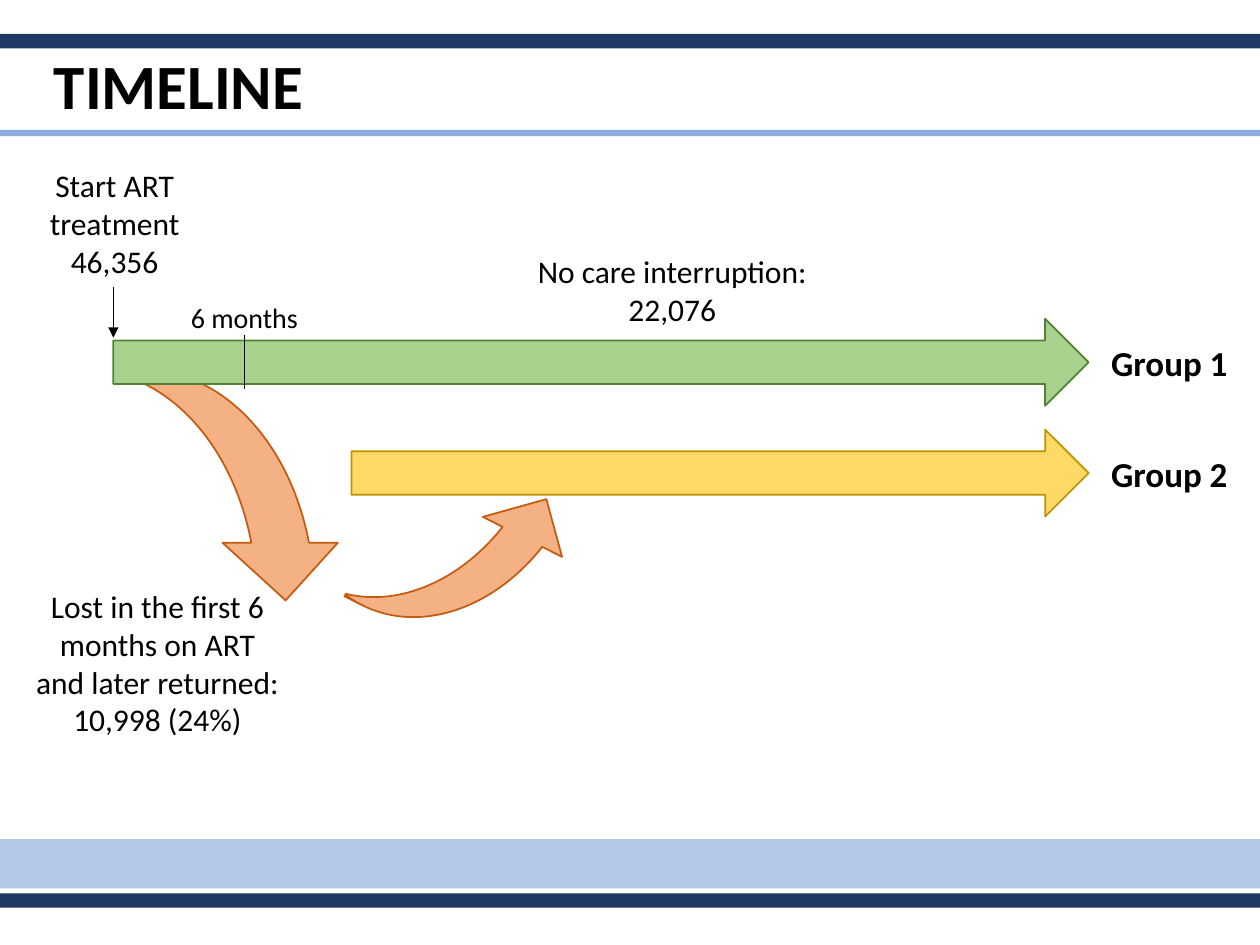
from dataclasses import dataclass
from lxml.etree import SubElement
from pptx import Presentation
from pptx.dml.color import RGBColor
from pptx.enum.shapes import MSO_CONNECTOR, MSO_SHAPE
from pptx.enum.text import MSO_ANCHOR, MSO_AUTO_SIZE, PP_ALIGN
from pptx.oxml.ns import qn
from pptx.util import Inches, Pt

COLUMNS, ROWS = 100, 75


@dataclass(frozen=True)
class Theme:
    font: str = "Calibri"
    ink: str = "000000"
    paper: str = "FFFFFF"
    navy: str = "203864"
    blue: str = "8FAADC"
    pale_blue: str = "B4C7E7"
    green: tuple = ("A9D18E", "548235")
    yellow: tuple = ("FFD966", "BF9000")
    orange: tuple = ("F4B183", "C55A11")
    title: int = 36
    group: int = 20
    body: int = 18
    small: int = 16


THEME = Theme()


@dataclass(frozen=True)
class Box:
    left: float
    top: float
    width: float
    height: float

    def inner(self, column, row, width, height):
        return Box(self.left + column, self.top + row, width, height)

    def lengths(self, deck):
        across, down = deck.slide_width / COLUMNS, deck.slide_height / ROWS
        return (round(self.left * across), round(self.top * down),
                round(self.width * across), round(self.height * down))


class Canvas:
    def __init__(self, deck):
        self.deck = deck
        self.shapes = deck.slides.add_slide(deck.slide_layouts[6]).shapes

    def shape(self, kind, box, fill, line=None, rotation=0, flip=False):
        form = self.shapes.add_shape(kind, *box.lengths(self.deck))
        form.shadow.inherit = False
        form.fill.solid()
        form.fill.fore_color.rgb = RGBColor.from_string(fill)
        if line:
            form.line.color.rgb = RGBColor.from_string(line)
            form.line.width = Pt(1)
        else:
            form.line.fill.background()
        form.rotation = rotation
        if flip:
            form._element.spPr.find(qn("a:xfrm")).set("flipV", "1")

    def text(self, box, paragraphs, size, bold=False, align=PP_ALIGN.CENTER,
             middle=False, wrap=True, spacing=None):
        holder = self.shapes.add_textbox(*box.lengths(self.deck))
        frame = holder.text_frame
        frame.word_wrap = wrap
        frame.auto_size = MSO_AUTO_SIZE.NONE if middle else MSO_AUTO_SIZE.SHAPE_TO_FIT_TEXT
        frame.vertical_anchor = MSO_ANCHOR.MIDDLE if middle else MSO_ANCHOR.TOP
        for index, words in enumerate(paragraphs):
            paragraph = frame.add_paragraph() if index else frame.paragraphs[0]
            paragraph.alignment = align
            paragraph.line_spacing = spacing
            run = paragraph.add_run()
            run.text = words
            run.font.name = THEME.font
            run.font.size = Pt(size)
            run.font.bold = bold
            run.font.color.rgb = RGBColor.from_string(THEME.ink)

    def marker(self, box, arrow=False):
        left, top, _, height = box.lengths(self.deck)
        line = self.shapes.add_connector(MSO_CONNECTOR.STRAIGHT, left, top, left, top + height)
        line.line.color.rgb = RGBColor.from_string(THEME.ink)
        line.line.width = Pt(0.5)
        if arrow:
            SubElement(line.line._get_or_add_ln(), qn("a:tailEnd"), type="triangle")
        SubElement(line._element.spPr, qn("a:effectLst"))


def header(canvas, box):
    canvas.shape(MSO_SHAPE.RECTANGLE, box.inner(0, 0, box.width, 1.15), THEME.navy)
    canvas.shape(MSO_SHAPE.RECTANGLE, box.inner(0, box.height - 0.5, box.width, 0.5), THEME.blue)
    canvas.text(box.inner(3.3, 1.4, 94.2, 5.9), ["TIMELINE"], THEME.title, bold=True,
                align=PP_ALIGN.LEFT, middle=True, spacing=0.9)


def footer(canvas, box):
    canvas.shape(MSO_SHAPE.RECTANGLE, box.inner(0, 0, box.width, 3.9), THEME.pale_blue)
    canvas.shape(MSO_SHAPE.RECTANGLE, box.inner(0, box.height - 1.15, box.width, 1.15), THEME.navy)


def return_path(canvas, box):
    canvas.shape(MSO_SHAPE.CURVED_LEFT_ARROW, box.inner(24.1, 8.6, 14.1, 27.3),
                 *THEME.orange, rotation=116.8, flip=True)
    canvas.shape(MSO_SHAPE.RECTANGLE, box.inner(20.2, 0, 13, 29.6),
                 THEME.paper, THEME.paper, rotation=26.8, flip=True)


def loss_path(canvas, box):
    canvas.shape(MSO_SHAPE.CURVED_LEFT_ARROW, box.inner(8.2, 0, 18.3, 34),
                 *THEME.orange, rotation=270)
    canvas.shape(MSO_SHAPE.RECTANGLE, box.inner(0, 3.9, 16.2, 38.3), THEME.paper, THEME.paper)


def track(canvas, box, group, colours):
    canvas.shape(MSO_SHAPE.RIGHT_ARROW, box, *colours)
    canvas.text(box.inner(box.width + 0.8, 1.3, 11.3, 4.4), [group], THEME.group, bold=True,
                align=PP_ALIGN.LEFT, wrap=False)


def milestones(canvas, box):
    canvas.text(box.inner(0, 0, 16.4, 10.1), ["Start ART treatment", "46,356"], THEME.body)
    canvas.marker(box.inner(8.1, 10.1, 0, 4), arrow=True)
    canvas.marker(box.inner(18.5, 13.9, 0, 4.3))
    canvas.text(box.inner(12.6, 10.4, 11.8, 4.2), ["6 months"], THEME.small, middle=True)


def outcomes(canvas, box):
    canvas.text(box.inner(0, 26.6, 21.6, 13.1),
                ["Lost in the first 6 months on ART and later returned:", "10,998 (24%)"],
                THEME.body)
    canvas.text(box.inner(39.7, 0, 23.9, 7.1), ["No care interruption: 22,076"], THEME.body)


def main():
    deck = Presentation()
    deck.slide_width, deck.slide_height = Inches(10), Inches(7.5)
    canvas = Canvas(deck)
    footer(canvas, Box(0, 66.6, COLUMNS, 5.45))
    header(canvas, Box(0, 2.7, COLUMNS, 8.1))
    return_path(canvas, Box(0, 19.1, 45, 36))
    loss_path(canvas, Box(-7.1, 21.5, 35, 42))
    track(canvas, Box(9, 25.3, 77.4, 6.9), "Group 1", THEME.green)
    track(canvas, Box(27.9, 34.1, 58.5, 6.9), "Group 2", THEME.yellow)
    milestones(canvas, Box(0.9, 12.7, 25, 18.2))
    outcomes(canvas, Box(1.7, 19.5, 64, 40))
    deck.save("out.pptx")


if __name__ == "__main__":
    main()
